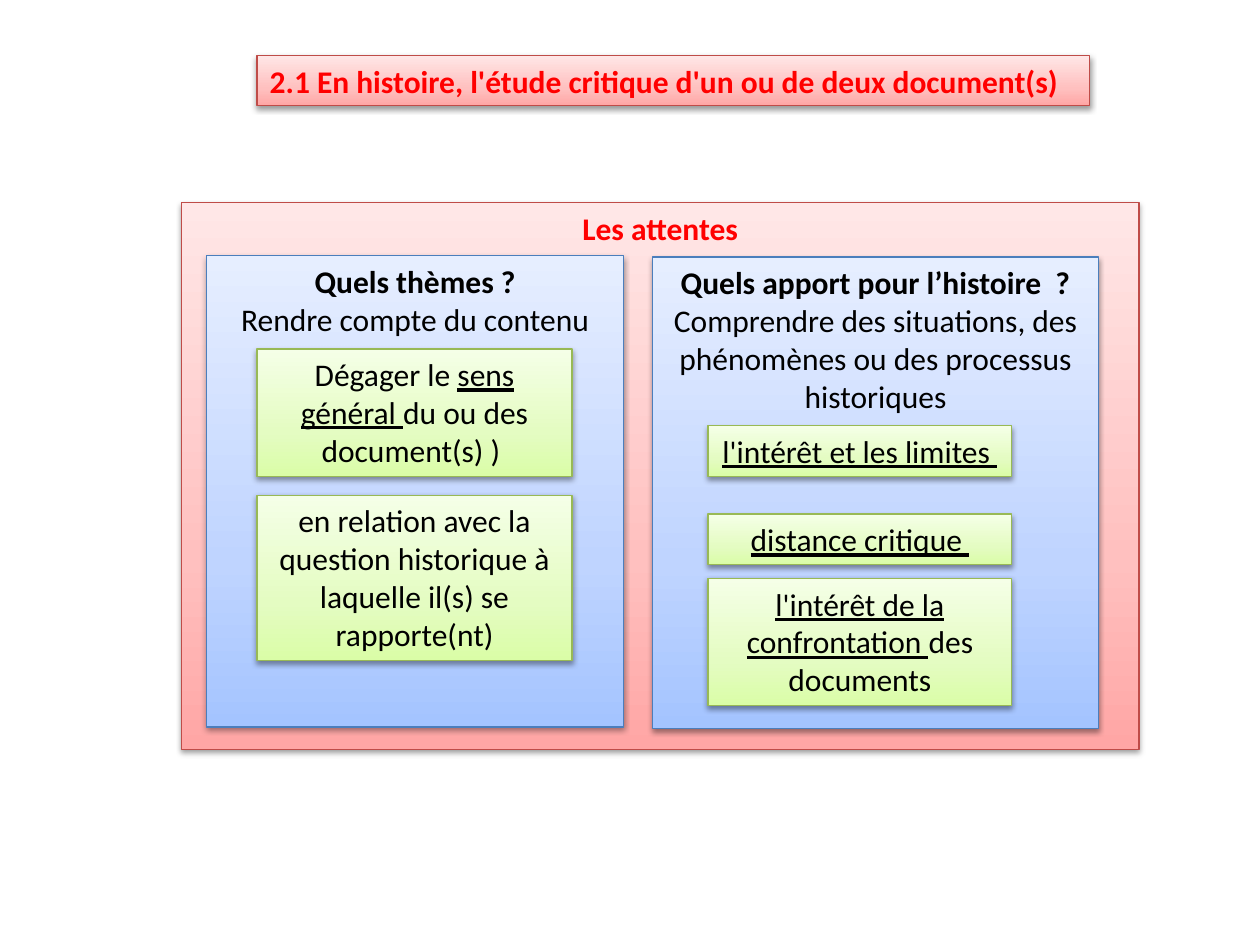
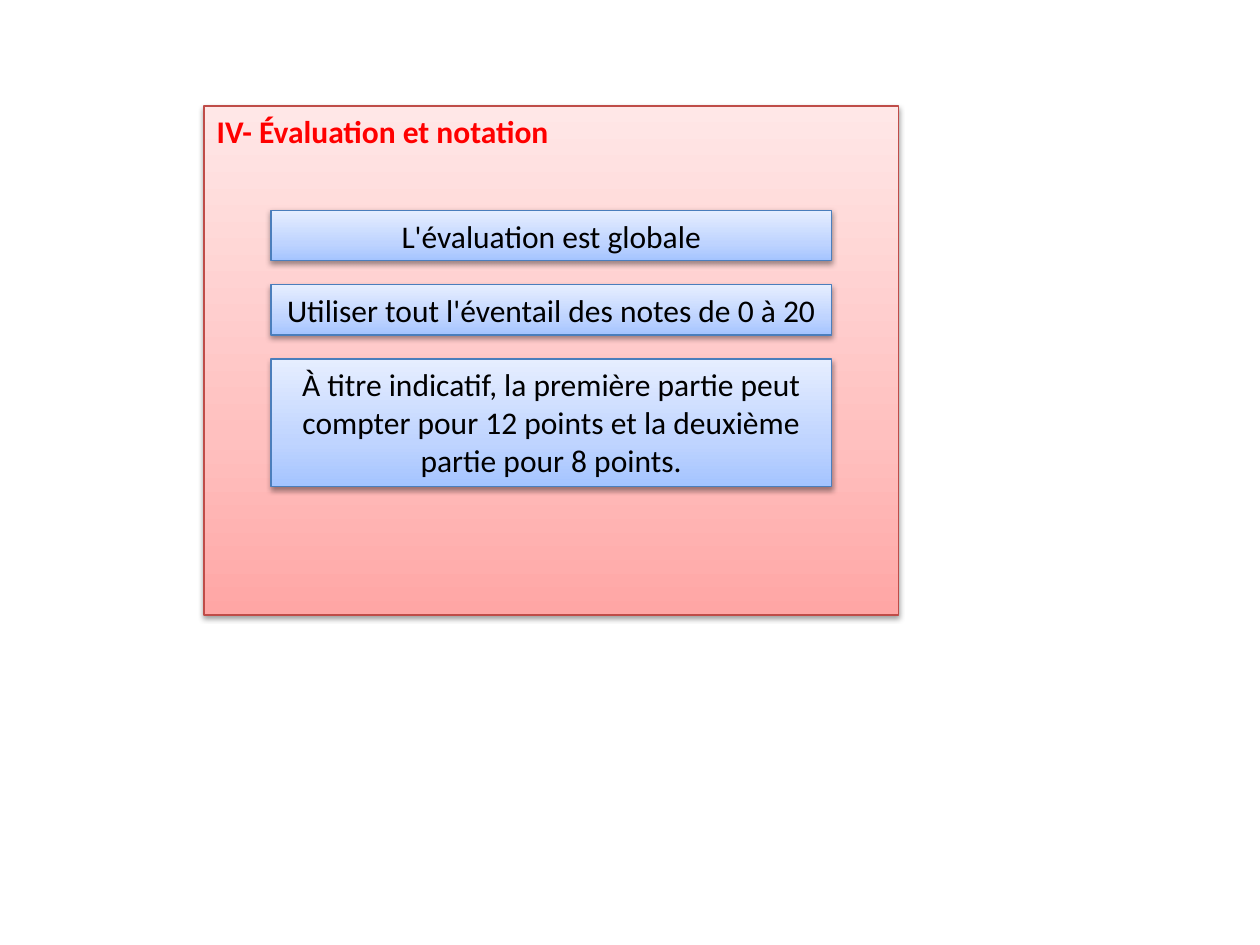
"""Build two slides on the assessment of critical document study in history."""
from copy import deepcopy
from dataclasses import dataclass

from lxml.etree import SubElement
from pptx import Presentation
from pptx.dml.color import RGBColor
from pptx.enum.shapes import MSO_SHAPE
from pptx.enum.text import MSO_ANCHOR, MSO_AUTO_SIZE, PP_ALIGN
from pptx.oxml.ns import qn
from pptx.presentation import Presentation as Deck
from pptx.shapes.autoshape import Shape
from pptx.slide import Slide
from pptx.util import Emu, Pt

EMU_PER_PX = 9144
SLIDE_WIDTH, SLIDE_HEIGHT = 1000, 750
FONT_NAME = "Calibri"
FONT_SIZE = Pt(18)
TITLE_ONLY = 5
CARD_HEIGHTS = {1: 40, 3: 101, 4: 131}

BLACK = RGBColor(0x00, 0x00, 0x00)
RED = RGBColor(0xFF, 0x00, 0x00)


@dataclass(frozen=True)
class Theme:
    """Gradient colours from bottom to top, and the outline colour."""
    bottom: RGBColor
    middle: RGBColor
    top: RGBColor
    outline: RGBColor


ROSE = Theme(RGBColor(0xFF, 0xA6, 0xA5), RGBColor(0xFF, 0xC0, 0xBF),
             RGBColor(0xFF, 0xE7, 0xE7), RGBColor(0xBF, 0x4C, 0x48))
BLUE = Theme(RGBColor(0xA4, 0xC4, 0xFF), RGBColor(0xBF, 0xD4, 0xFF),
             RGBColor(0xE6, 0xEE, 0xFF), RGBColor(0x4B, 0x7E, 0xBC))
GREEN = Theme(RGBColor(0xDA, 0xFD, 0xA7), RGBColor(0xE4, 0xFC, 0xC2),
              RGBColor(0xF5, 0xFF, 0xE7), RGBColor(0x98, 0xB9, 0x55))


@dataclass(frozen=True)
class Span:
    """A piece of text with one format."""
    text: str
    bold: bool = False
    underline: bool = False
    color: RGBColor = BLACK


@dataclass(frozen=True)
class Box:
    """A shaded rectangle holding paragraphs made of spans."""
    left: int
    top: int
    width: int
    height: int
    theme: Theme
    paragraphs: tuple[tuple[Span, ...], ...]
    alignment: PP_ALIGN = PP_ALIGN.CENTER
    wrap: bool = True


def px(length: int) -> Emu:
    """Convert pixels to EMU."""
    return Emu(length * EMU_PER_PX)


def heading(text: str) -> tuple[tuple[Span, ...], ...]:
    """Return one bold red paragraph."""
    return ((Span(text, bold=True, color=RED),),)


def card(left: int, top: int, width: int, lines: int, theme: Theme,
         *spans: Span, wrap: bool = True) -> Box:
    """Return a one-paragraph box whose height follows its line count."""
    return Box(left, top, width, CARD_HEIGHTS[lines], theme, (spans,), wrap=wrap)


def apply_theme(shape: Shape, theme: Theme) -> None:
    """Give a shape its three-stop gradient, outline and soft shadow."""
    shape.fill.gradient()
    shape.fill.gradient_angle = 90
    properties = shape._element.spPr
    first_stop = properties.find(".//" + qn("a:gs"))
    first_stop.addnext(deepcopy(first_stop))
    stops = zip(shape.fill.gradient_stops, (0, 0.35, 1),
                (theme.bottom, theme.middle, theme.top))
    for stop, position, color in stops:
        stop.position = position
        stop.color.rgb = color
    shape.line.color.rgb = theme.outline
    shape.line.width = Pt(0.75)
    shape.shadow.inherit = False
    shadow = SubElement(properties.find(qn("a:effectLst")), qn("a:outerShdw"),
                        blurRad="40000", dist="20000", dir="5400000", rotWithShape="0")
    color = SubElement(shadow, qn("a:srgbClr"), val=str(BLACK))
    SubElement(color, qn("a:alpha"), val="38000")


def write_text(shape: Shape, box: Box) -> None:
    """Write the paragraphs of a box into a shape."""
    text_frame = shape.text_frame
    text_frame.auto_size = MSO_AUTO_SIZE.NONE
    text_frame.word_wrap = box.wrap
    text_frame.vertical_anchor = MSO_ANCHOR.TOP
    text_frame.text = "\n".join("" for _ in box.paragraphs)
    for paragraph, spans in zip(text_frame.paragraphs, box.paragraphs):
        paragraph.alignment = box.alignment
        for span in spans:
            run = paragraph.add_run()
            run.text = span.text
            run.font.name = FONT_NAME
            run.font.size = FONT_SIZE
            run.font.bold = span.bold
            run.font.underline = span.underline
            run.font.color.rgb = span.color


def draw_title(slide: Slide, box: Box) -> None:
    """Move and format the title placeholder as a box."""
    title = slide.shapes.title
    title.left, title.top = px(box.left), px(box.top)
    title.width, title.height = px(box.width), px(box.height)
    apply_theme(title, box.theme)
    write_text(title, box)


def draw_box(slide: Slide, box: Box) -> None:
    """Draw a box as a rectangle."""
    shape = slide.shapes.add_shape(MSO_SHAPE.RECTANGLE, px(box.left), px(box.top),
                                   px(box.width), px(box.height))
    apply_theme(shape, box.theme)
    write_text(shape, box)


def add_boxed_slide(presentation: Deck, title: Box, boxes: list[Box]) -> None:
    """Add a slide with a boxed title and further boxes from back to front."""
    slide = presentation.slides.add_slide(presentation.slide_layouts[TITLE_ONLY])
    draw_title(slide, title)
    for box in boxes:
        draw_box(slide, box)


def add_expectations(presentation: Deck) -> None:
    """Add the slide on what is expected of the document study."""
    title = Box(204, 44, 661, 40, ROSE,
                heading("2.1 En histoire, l'étude critique d'un ou de deux document(s)"),
                PP_ALIGN.LEFT)
    themes = (
        (Span("Quels thèmes ?", bold=True),),
        (Span("Rendre compte du contenu"),),
    )
    contributions = (
        (Span("Quels apport pour l’histoire  ?", bold=True),),
        (Span("Comprendre des situations, des phénomènes ou des processus historiques"),),
    )
    theme_left, theme_width = 204, 250
    contribution_left, contribution_width = 562, 241
    add_boxed_slide(presentation, title, [
        Box(144, 161, 760, 434, ROSE, heading("Les attentes")),
        Box(164, 203, 331, 374, BLUE, themes),
        Box(518, 204, 354, 374, BLUE, contributions),
        card(theme_left, 277, theme_width, 3, GREEN, Span("Dégager le "),
             Span("sens général ", underline=True), Span("du ou des document(s) ) ")),
        card(theme_left, 393, theme_width, 4, GREEN,
             Span("en relation avec la question historique à laquelle il(s) se rapporte(nt)")),
        card(contribution_left, 338, contribution_width, 1, GREEN,
             Span("l'intérêt et les limites ", underline=True), wrap=False),
        card(contribution_left, 408, contribution_width, 1, GREEN,
             Span("distance critique ", underline=True)),
        card(contribution_left, 459, contribution_width, 3, GREEN,
             Span("l'intérêt de la confrontation ", underline=True), Span("des documents")),
    ])


def add_grading(presentation: Deck) -> None:
    """Add the slide on evaluation and marks."""
    panel = Box(162, 84, 551, 404, ROSE, heading("IV- Évaluation et notation"),
                PP_ALIGN.LEFT)
    rules = (
        ("L'évaluation est globale", 1),
        ("Utiliser tout l'éventail des notes de 0 à 20", 1),
        ("À titre indicatif, la première partie peut compter pour 12 points "
         "et la deuxième partie pour 8 points.", 3),
    )
    first_top, pitch = 167, 59
    add_boxed_slide(presentation, panel, [
        card(215, first_top + index * pitch, 445, lines, BLUE, Span(text))
        for index, (text, lines) in enumerate(rules)
    ])


def main() -> None:
    """Build and save the presentation."""
    presentation = Presentation()
    presentation.slide_width = px(SLIDE_WIDTH)
    presentation.slide_height = px(SLIDE_HEIGHT)
    add_expectations(presentation)
    add_grading(presentation)
    presentation.save("out.pptx")


if __name__ == "__main__":
    main()
